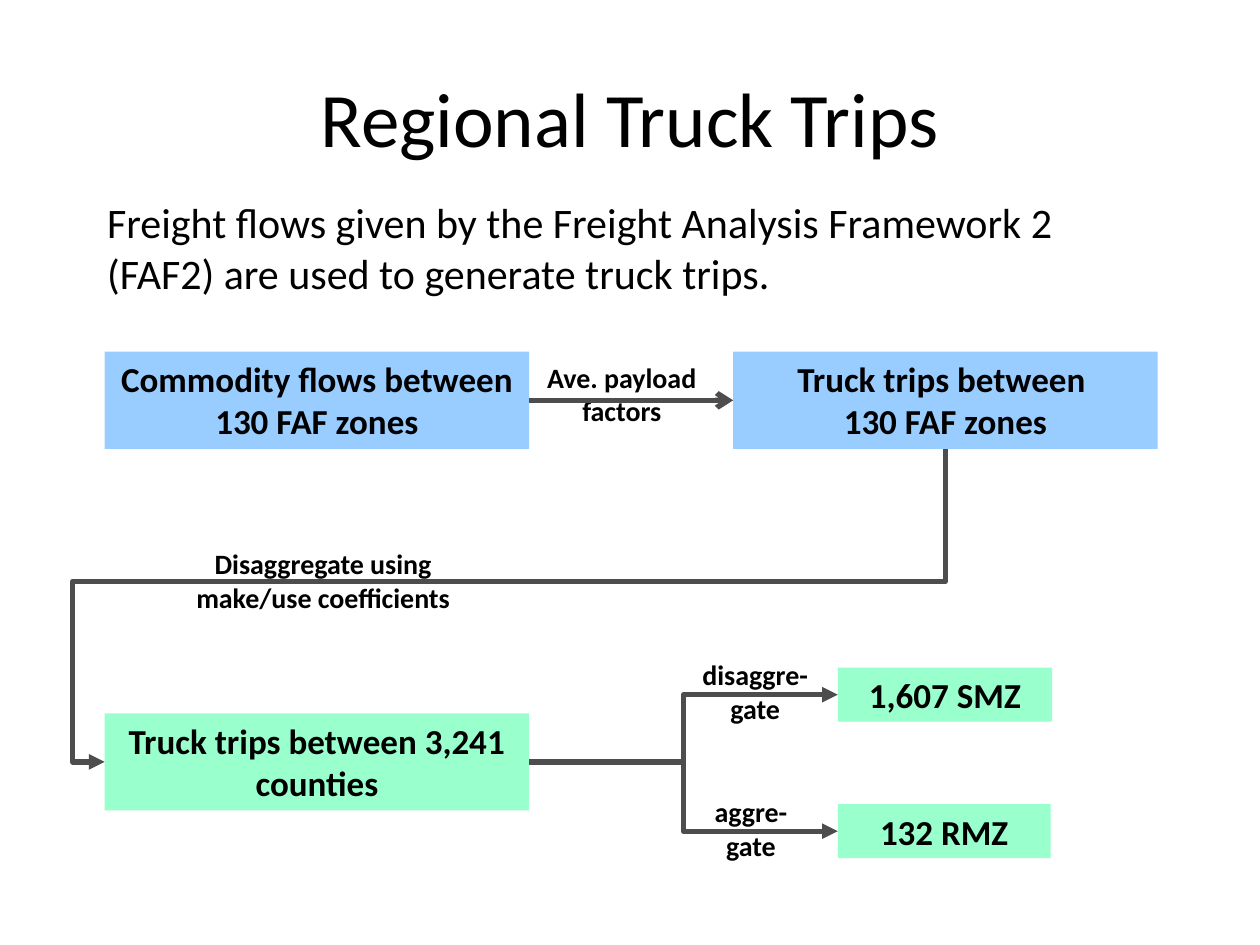
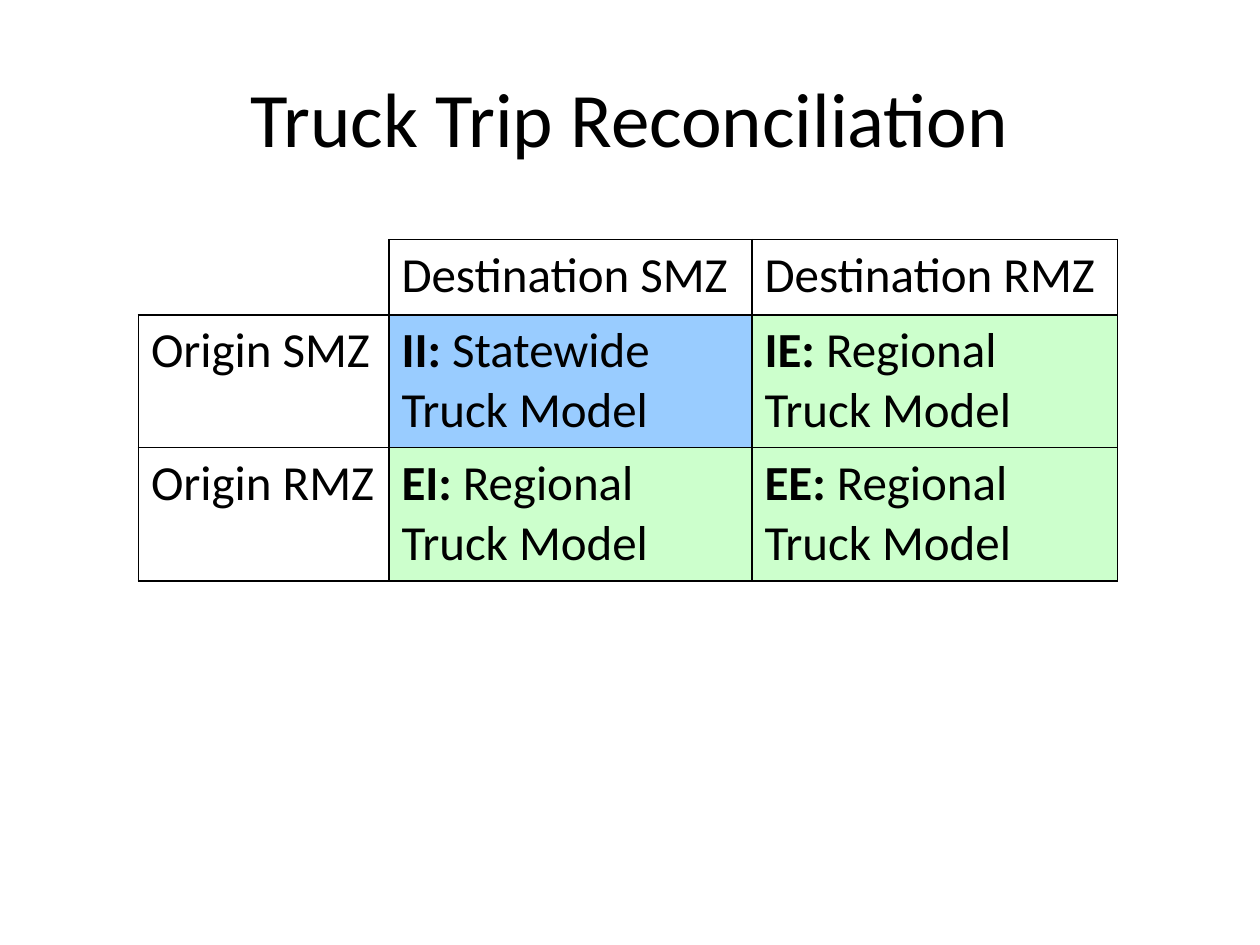
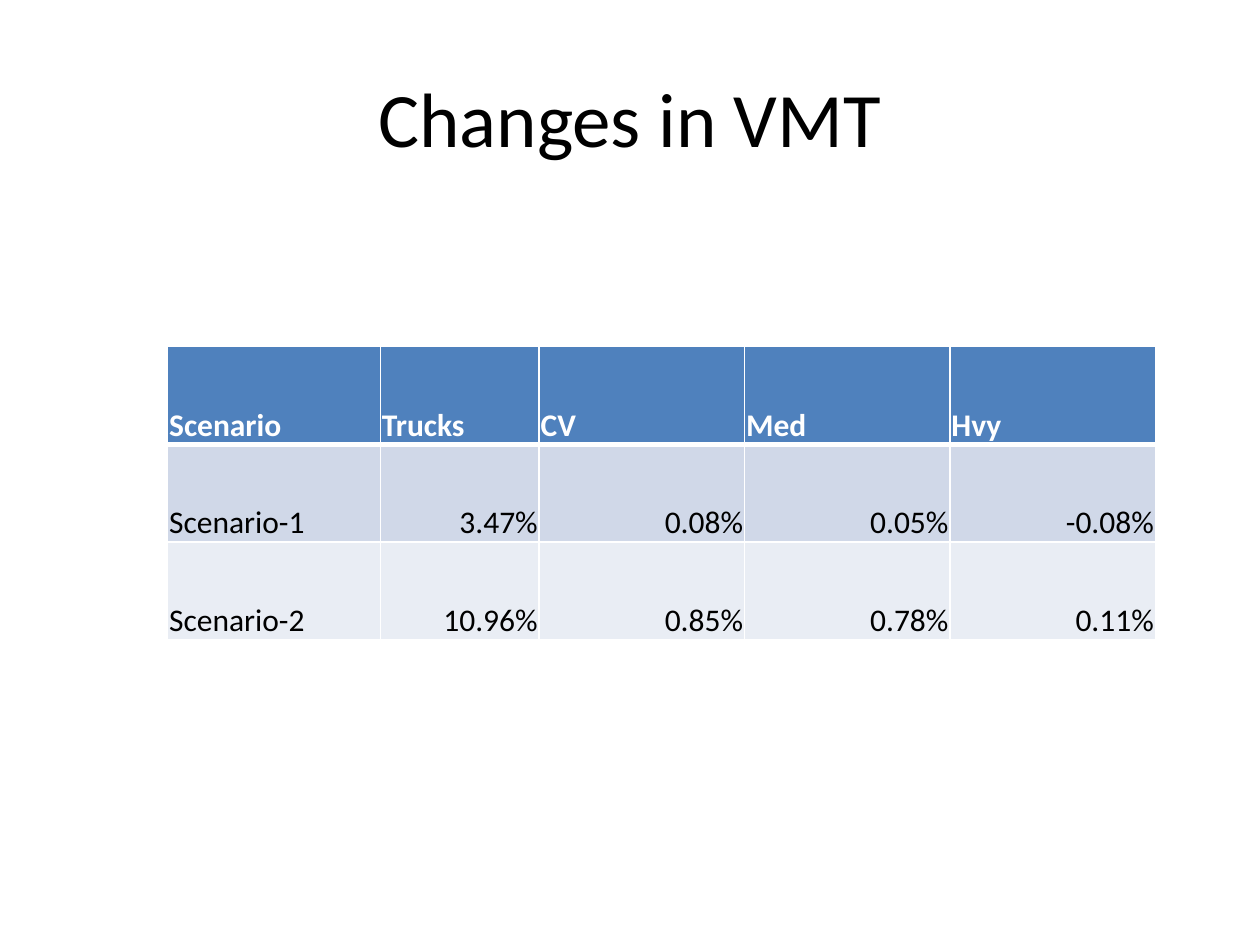
"""Build three slides on regional truck trips, their reconciliation and VMT changes."""
from dataclasses import dataclass

from lxml import etree
from pptx import Presentation
from pptx import util as u
from pptx.dml.color import RGBColor
from pptx.enum import shapes, text
from pptx.oxml import ns

FONT = "Calibri"
COLORS = {
    "ink": "000000", "white": "FFFFFF", "line": "4D4D4D",
    "blue": "99CCFF", "mint": "99FFCC", "green": "CCFFCC",
    "header": "4F81BD", "band": "D0D8E8", "light": "E9EDF4",
}
LEFT, CENTER, RIGHT = text.PP_ALIGN.LEFT, text.PP_ALIGN.CENTER, text.PP_ALIGN.RIGHT
TOP, MIDDLE, BOTTOM = (text.MSO_ANCHOR.TOP, text.MSO_ANCHOR.MIDDLE,
                       text.MSO_ANCHOR.BOTTOM)


@dataclass(frozen=True)
class Area:
    left: float
    top: float
    width: float
    height: float

    def lengths(self) -> tuple:
        return tuple(map(u.Cm, (self.left, self.top, self.width, self.height)))


@dataclass(frozen=True)
class Block:
    words: str
    area: Area
    color: str


@dataclass(frozen=True)
class Label:
    words: str
    area: Area


@dataclass(frozen=True)
class Entry:
    words: str
    lead: str = ""
    fill: str = ""


TITLE_AREA = Area(1.27, 0.76, 22.86, 3.18)
BLOCKS = {
    "flows": Block("Commodity flows between 130 FAF zones",
                   Area(2.11, 7.09, 8.56, 1.96), "blue"),
    "trips": Block("Truck trips between \v130 FAF zones",
                   Area(14.78, 7.09, 8.56, 1.96), "blue"),
    "counties": Block("Truck trips between 3,241 counties",
                      Area(2.11, 14.38, 8.56, 1.96), "mint"),
    "smz": Block("1,607 SMZ", Area(16.89, 13.46, 4.32, 1.09), "mint"),
    "rmz": Block("132 RMZ", Area(16.89, 16.21, 4.29, 1.09), "mint"),
}
LABELS = [
    Label("Ave. payload factors", Area(10.54, 7.14, 3.99, 1.63)),
    Label("Disaggregate using make/use coefficients", Area(3.25, 10.9, 6.53, 1.63)),
    Label("disaggre-\ngate", Area(13.56, 13.13, 3.33, 1.63)),
    Label("aggre-\ngate", Area(14.02, 15.9, 2.24, 1.63)),
]
MODELS = [
    [Entry(""), Entry("Destination SMZ"), Entry("Destination RMZ")],
    [Entry("Origin SMZ"), Entry(" Statewide \vTruck Model", "II:", "blue"),
     Entry(" Regional Truck Model", "IE:", "green")],
    [Entry("Origin RMZ"), Entry(" Regional Truck Model", "EI:", "green"),
     Entry(" Regional Truck Model", "EE:", "green")],
]
CHANGES = [
    ["Scenario", "Trucks", "CV", "Med", "Hvy"],
    ["Scenario-1", "3.47%", "0.08%", "0.05%", "-0.08%"],
    ["Scenario-2", "10.96%", "0.85%", "0.78%", "0.11%"],
]


def rgb(color: str) -> RGBColor:
    return RGBColor.from_string(COLORS[color])


def write(frame, words: str, *, size: float, lead: str = "", bold: bool = False,
          color: str = "ink", align=LEFT, anchor=TOP) -> None:
    frame.word_wrap = True
    frame.vertical_anchor = anchor
    for index, paragraph in enumerate(words.split("\n")):
        para = frame.add_paragraph() if index else frame.paragraphs[0]
        para.alignment = align
        pieces = [(lead, True)] if lead else []
        for part, piece in enumerate(paragraph.split("\v")):
            pieces += [("\v", bold)] * (part > 0) + [(piece, bold)]
        for piece, heavy in pieces:
            if piece == "\v":
                para.add_line_break()
                continue
            span = para.add_run()
            span.text = piece
            span.font.name, span.font.size, span.font.bold = FONT, u.Pt(size), heavy
            span.font.color.rgb = rgb(color)


def add_text(page, words: str, area: Area, **style) -> None:
    box = page.shapes.add_textbox(*area.lengths())
    write(box.text_frame, words, **style)


def add_page(deck, title: str):
    page = deck.slides.add_slide(deck.slide_layouts[6])
    add_text(page, title, TITLE_AREA, size=44, align=CENTER, anchor=MIDDLE)
    return page


def add_block(page, block: Block):
    box = page.shapes.add_shape(shapes.MSO_SHAPE.RECTANGLE, *block.area.lengths())
    box.shadow.inherit = False
    box.fill.solid()
    box.fill.fore_color.rgb = rgb(block.color)
    box.line.fill.background()
    write(box.text_frame, block.words, size=20, bold=True, align=CENTER)
    return box


def style_arrow(arrow, head: str) -> None:
    arrow.line.width = u.Pt(3)
    arrow.line.color.rgb = rgb("line")
    properties = arrow.element.spPr
    etree.SubElement(properties.find(ns.qn("a:ln")), ns.qn("a:tailEnd"), type=head)
    etree.SubElement(properties, ns.qn("a:effectLst"))


def join(page, start, end, kind, head: str) -> None:
    arrow = page.shapes.add_connector(kind, 0, 0, 0, 0)
    arrow.begin_connect(start, 3)
    arrow.end_connect(end, 1)
    style_arrow(arrow, head)


def add_return_arrow(page, start, end) -> None:
    start_x, start_y = start.left + start.width // 2, start.top + start.height
    end_x, end_y = end.left, end.top + end.height // 2
    across, down = start_x - end_x, end_y - start_y
    left, top = (start_x + end_x - down) // 2, (start_y + end_y - across) // 2
    arrow = page.shapes.add_connector(shapes.MSO_CONNECTOR.ELBOW, left, top,
                                      left + down, top + across)
    properties = arrow.element.spPr
    properties.find(ns.qn("a:xfrm")).set("rot", str(90 * 60000))
    geometry = properties.find(ns.qn("a:prstGeom"))
    geometry.set("prst", "bentConnector4")
    guides = geometry.find(ns.qn("a:avLst"))
    for name, value in (("adj1", 42300), ("adj2", 103800)):
        etree.SubElement(guides, ns.qn("a:gd"), name=name, fmla=f"val {value}")
    style_arrow(arrow, "triangle")


def add_grid(page, left: float, top: float, widths: list[float], heights: list[float]):
    area = Area(left, top, sum(widths), sum(heights))
    table = page.shapes.add_table(len(heights), len(widths), *area.lengths()).table
    table.first_row = table.horz_banding = False
    for column, width in zip(table.columns, widths):
        column.width = u.Cm(width)
    for row, height in zip(table.rows, heights):
        row.height = u.Cm(height)
    return table


def style_cell(cell, fill: str, border: str, widths: dict[str, float]) -> None:
    if fill:
        cell.fill.solid()
        cell.fill.fore_color.rgb = rgb(fill)
    else:
        cell.fill.background()
    properties = cell._tc.get_or_add_tcPr()
    for index, side in enumerate("LRTB"):
        width = widths.get(side, 0)
        line = etree.Element(ns.qn(f"a:ln{side}"), w=str(u.Pt(width)))
        if width:
            paint = etree.SubElement(line, ns.qn("a:solidFill"))
            etree.SubElement(paint, ns.qn("a:srgbClr"), val=COLORS[border])
        else:
            etree.SubElement(line, ns.qn("a:noFill"))
        properties.insert(index, line)


def add_trips_page(deck) -> None:
    page = add_page(deck, "Regional Truck Trips")
    add_text(page, "Freight flows given by the Freight Analysis Framework 2 (FAF2) "
             "are used to generate truck trips.", Area(1.91, 3.84, 21.69, 2.29), size=24)
    boxes = {name: add_block(page, block) for name, block in BLOCKS.items()}
    for label in LABELS:
        add_text(page, label.words, label.area, size=16, bold=True, align=CENTER)
    join(page, boxes["flows"], boxes["trips"], shapes.MSO_CONNECTOR.STRAIGHT, "arrow")
    add_return_arrow(page, boxes["trips"], boxes["counties"])
    for zone in ("smz", "rmz"):
        join(page, boxes["counties"], boxes[zone], shapes.MSO_CONNECTOR.ELBOW, "triangle")


def add_models_page(deck) -> None:
    page = add_page(deck, "Truck Trip Reconciliation")
    table = add_grid(page, 2.79, 4.83, [5.05, 7.32, 7.37], [1.52, 2.67, 2.69])
    for row, entries in enumerate(MODELS):
        for column, entry in enumerate(entries):
            cell = table.cell(row, column)
            if entry.words:
                write(cell.text_frame, entry.words, lead=entry.lead, size=28)
            sides = "LRTB" if entry.words else "RB"
            style_cell(cell, entry.fill, "ink", dict.fromkeys(sides, 1))


def add_changes_page(deck) -> None:
    page = add_page(deck, "Changes in VMT")
    table = add_grid(page, 3.38, 6.99, [4.29, 3.2] + [4.14] * 3, [1.97] * 3)
    for row, (values, fill) in enumerate(zip(CHANGES, ("header", "band", "light"))):
        header = row == 0
        for column, value in enumerate(values):
            cell = table.cell(row, column)
            cell.margin_left = cell.margin_right = cell.margin_top = u.Cm(0.03)
            cell.margin_bottom = 0
            write(cell.text_frame, value, size=18, bold=header,
                  color="white" if header else "ink",
                  align=LEFT if header or column == 0 else RIGHT)
            cell.vertical_anchor = BOTTOM
            style_cell(cell, fill, "white", {
                "L": 1, "R": 1, "T": 3 if row == 1 else 1, "B": 3 if header else 1})


def main() -> None:
    deck = Presentation()
    deck.slide_width, deck.slide_height = u.Cm(25.4), u.Cm(19.05)
    add_trips_page(deck)
    add_models_page(deck)
    add_changes_page(deck)
    deck.save("out.pptx")


if __name__ == "__main__":
    main()
